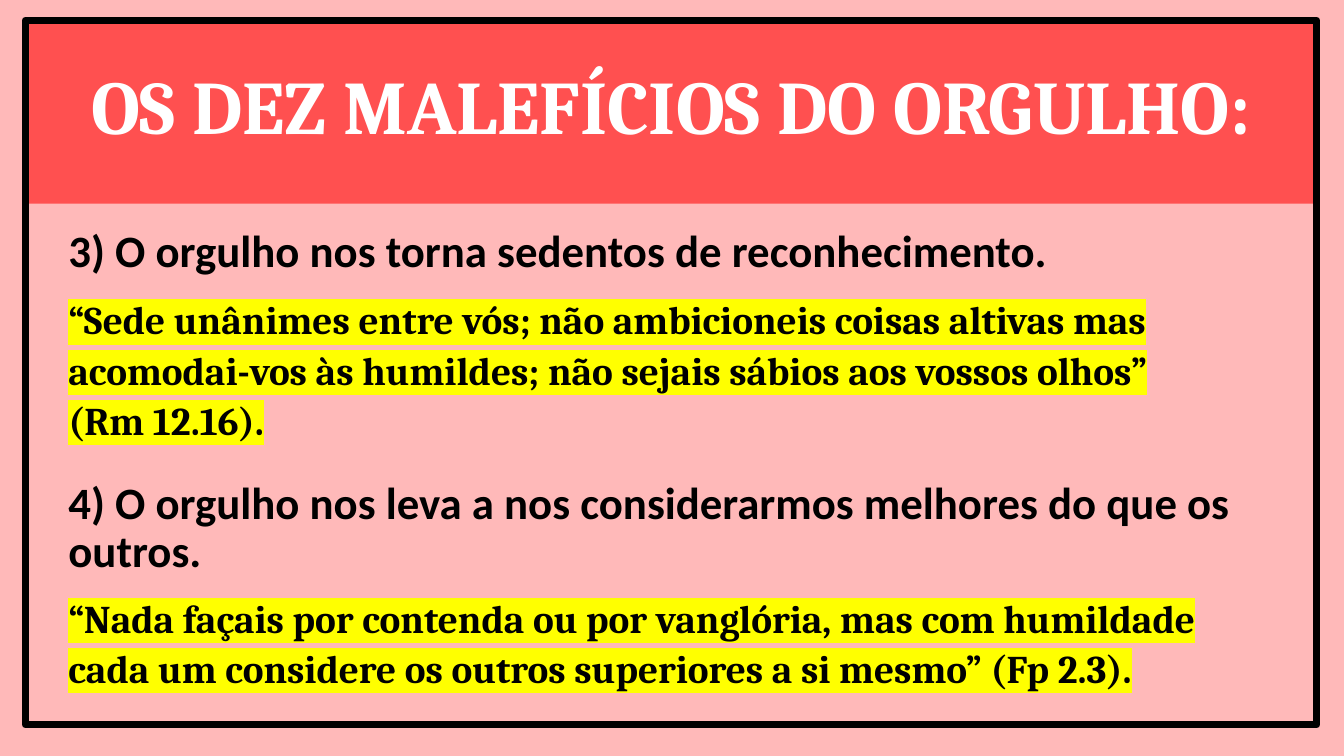
import pptx
import pptx.dml.color
import pptx.enum.shapes
import pptx.enum.text
import pptx.oxml
import pptx.oxml.ns
import pptx.util

RGBColor = pptx.dml.color.RGBColor
PINK = RGBColor(0xFF, 0xB9, 0xB9)
RED = RGBColor(0xFF, 0x50, 0x50)
BLACK = RGBColor(0x00, 0x00, 0x00)
WHITE = RGBColor(0xFF, 0xFF, 0xFF)
YELLOW = RGBColor(0xFF, 0xFF, 0x00)

FRAME_LEFT, FRAME_TOP, FRAME_WIDTH = 1.88, 2.67, 96.1
TEXT_LEFT = 4.35

POINTS = [
    ("3) O orgulho nos torna sedentos de reconhecimento.",
     (29.6, 88.82, 11.87),
     "“Sede unânimes entre vós; não ambicioneis coisas altivas mas acomodai-vos "
     "às humildes; não sejais sábios aos vossos olhos” (Rm 12.16).",
     (38, 87.32, 20.93)),
    ("4) O orgulho nos leva a nos considerarmos melhores do que os outros.",
     (62.93, 88.82, 20.4),
     "“Nada façais por contenda ou por vanglória, mas com humildade cada um "
     "considere os outros superiores a si mesmo” (Fp 2.3).",
     (77.47, 88.82, 21.87)),
]


class SlideBuilder:
    """Draw styled elements placed by percentages of the slide's size."""

    heading_font = "Calibri"
    serif_font = "Cambria"

    def __init__(self, presentation):
        self.width = presentation.slide_width
        self.height = presentation.slide_height
        self.slide = presentation.slides.add_slide(presentation.slide_layouts[5])

    def place(self, left, top, width, height):
        return (round(self.width * left / 100), round(self.height * top / 100),
                round(self.width * width / 100), round(self.height * height / 100))

    def background(self, color):
        fill = self.slide.background.fill
        fill.solid()
        fill.fore_color.rgb = color

    def style_text(self, shape, text, font, size, color, line_spacing):
        shape.text_frame.word_wrap = True
        shape.text_frame.auto_size = pptx.enum.text.MSO_AUTO_SIZE.NONE
        shape.text_frame.text = text
        paragraph = shape.text_frame.paragraphs[0]
        paragraph.line_spacing = line_spacing
        run = paragraph.runs[0]
        run.font.name = font
        run.font.size = pptx.util.Pt(size)
        run.font.bold = True
        run.font.color.rgb = color
        return paragraph

    def title(self, text, *box):
        title = self.slide.shapes.title
        title.left, title.top, title.width, title.height = self.place(*box)
        title.fill.solid()
        title.fill.fore_color.rgb = RED
        paragraph = self.style_text(title, text, self.serif_font, 54, WHITE, 0.9)
        paragraph.alignment = pptx.enum.text.PP_ALIGN.CENTER
        title.text_frame.vertical_anchor = pptx.enum.text.MSO_ANCHOR.BOTTOM
        title.text_frame.margin_bottom = pptx.util.Inches(0.52)

    def frame(self, *box):
        frame = self.slide.shapes.add_shape(
            pptx.enum.shapes.MSO_SHAPE.RECTANGLE, *self.place(*box))
        frame.shadow.inherit = False
        frame.fill.background()
        frame.line.color.rgb = BLACK
        frame.line.width = pptx.util.Pt(5)

    def text(self, text, font, size, line_spacing, *box):
        shape = self.slide.shapes.add_textbox(*self.place(*box))
        paragraph = self.style_text(shape, text, font, size, BLACK, line_spacing)
        paragraph.space_before = pptx.util.Pt(10)
        return paragraph

    def heading(self, text, *box):
        self.text(text, self.heading_font, 32, 0.9, *box)

    def quote(self, text, *box):
        paragraph = self.text(text, self.serif_font, 28, 1.07, *box)
        paragraph.space_after = pptx.util.Pt(8)
        highlight = pptx.oxml.parse_xml(
            f'<a:highlight {pptx.oxml.ns.nsdecls("a")}>'
            f'<a:srgbClr val="{YELLOW}"/></a:highlight>')
        properties = paragraph.runs[0].font._element
        properties.find(pptx.oxml.ns.qn("a:solidFill")).addnext(highlight)


def main():
    presentation = pptx.Presentation()
    presentation.slide_width = pptx.util.Inches(13.33)
    presentation.slide_height = pptx.util.Inches(7.5)
    builder = SlideBuilder(presentation)
    builder.background(PINK)
    builder.title("OS DEZ MALEFÍCIOS DO ORGULHO:",
                  FRAME_LEFT, FRAME_TOP, FRAME_WIDTH, 24.27)
    builder.frame(FRAME_LEFT, FRAME_TOP, FRAME_WIDTH, 93.2)
    for heading, heading_box, quote, quote_box in POINTS:
        builder.heading(heading, TEXT_LEFT, *heading_box)
        builder.quote(quote, TEXT_LEFT, *quote_box)
    presentation.save("out.pptx")


if __name__ == "__main__":
    main()
